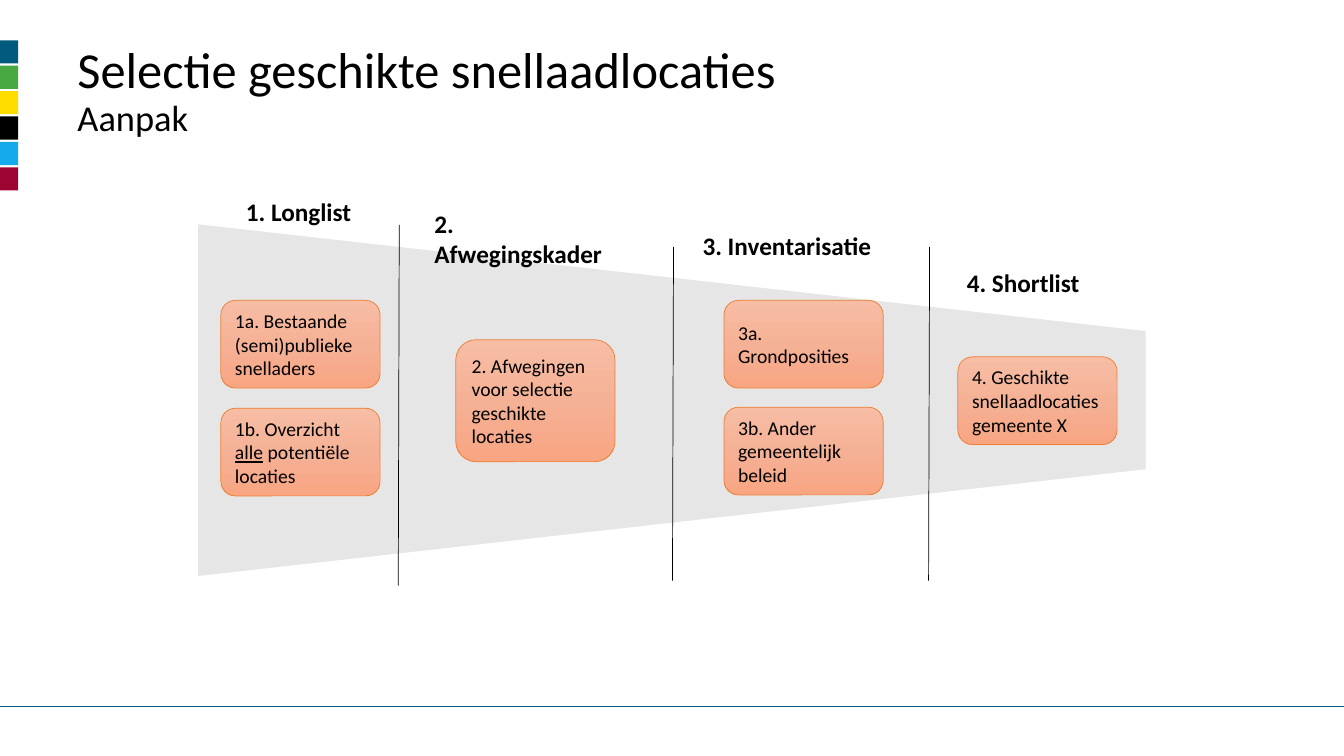
from copy import deepcopy
from pptx import Presentation
from pptx.dml.color import RGBColor as Rgb
from pptx.enum.shapes import MSO_CONNECTOR as Line, MSO_SHAPE as Shape
from pptx.enum.text import MSO_ANCHOR as Anchor, MSO_AUTO_SIZE as Auto, PP_ALIGN as Align
from pptx.oxml.ns import qn
from pptx.oxml.xmlchemy import OxmlElement
from pptx.util import Inches, Pt

BLACK = Rgb(0, 0, 0)
BLUE = Rgb(0x00, 0x5B, 0x7F)
GREY = Rgb(0xE7, 0xE6, 0xE6)
EDGE = Rgb(0xED, 0x7D, 0x31)
GLOW = [Rgb(0xF7, 0xBD, 0xA5), Rgb(0xF5, 0xB1, 0x96), Rgb(0xF8, 0xA5, 0x82)]
STRIPES = [BLUE, Rgb(0x48, 0xA8, 0x42), Rgb(0xFF, 0xDD, 0x00), BLACK,
           Rgb(0x15, 0xAB, 0xEA), Rgb(0x9E, 0x04, 0x31)]
FONT = "Calibri"
CARD_W, CARD_H = 1.58, 0.87

STAGES = [
    ("1. Longlist", 0.37, -0.33, 0.22, [
        (0.75, CARD_H, ["1a. Bestaande (semi)publieke", "snelladers"]),
        (1.82, CARD_H, ["1b. Overzicht _alle_ potentiële locaties"])]),
    ("2. Afwegingskader", 2.24, -0.21, 2.55, [
        (1.14, 1.21, ["2. Afwegingen voor selectie geschikte locaties"])]),
    ("3. Inventarisatie", 4.9, 0.01, 5.21, [
        (0.75, CARD_H, ["3a. Grondposities"]),
        (1.81, CARD_H, ["3b. Ander gemeentelijk beleid"])]),
    ("4. Shortlist", 7.52, 0.37, 7.53, [
        (1.31, CARD_H, ["4. Geschikte snellaadlocaties gemeente X"])]),
]
SPLITS = [(1.99, 0, 3.58), (4.71, 0.22, 3.53), (7.25, 0.22, 3.53)]


def style(para, size, bold=False):
    """Format every run of a paragraph."""
    for run in para.runs:
        font = run.font
        font.name, font.size, font.bold = FONT, Pt(size), bold
        font.color.rgb = BLACK


def add_form(slide, kind, x, y, w, h):
    """Add a preset shape without shadow."""
    form = slide.shapes.add_shape(kind, Inches(x), Inches(y), Inches(w), Inches(h))
    form.shadow.inherit = False
    return form


def add_rule(slide, x1, y1, x2, y2, tint):
    """Add a thin straight line."""
    rule = slide.shapes.add_connector(
        Line.STRAIGHT, Inches(x1), Inches(y1), Inches(x2), Inches(y2))
    rule.line.color.rgb = tint
    rule.line.width = Pt(0.5)
    rule._element.spPr.append(OxmlElement("a:effectLst"))


def add_frame(slide, x, y, w, h):
    """Add a text box and return its text frame."""
    return slide.shapes.add_textbox(
        Inches(x), Inches(y), Inches(w), Inches(h)).text_frame


def add_brand(slide, x, y, w, h):
    """Stack the colour stripes down the edge of the box."""
    step = 0.252
    for i, tint in enumerate(STRIPES):
        bar = add_form(slide, Shape.RECTANGLE, x, y + i * step, w, h - 5 * step)
        bar.fill.solid()
        bar.fill.fore_color.rgb = tint
        bar.line.fill.background()


def add_title(slide, x, y, w, h):
    """Write the title and its second line in the box."""
    frame = add_frame(slide, x, y, w, h)
    frame.word_wrap = True
    frame.text = "Selectie geschikte snellaadlocaties\nAanpak"
    for para, size in zip(frame.paragraphs, (36, 26)):
        para.line_spacing = 0.9
        style(para, size)


def add_card(slide, x, y, w, h, lines):
    """Draw a shaded card; words between underscores are underlined."""
    card = add_form(slide, Shape.ROUNDED_RECTANGLE, x, y, w, h)
    card.fill.gradient()
    card.fill.gradient_angle = 270
    first = card._element.spPr.find(qn("a:gradFill")).find(qn("a:gsLst"))[0]
    first.addnext(deepcopy(first))
    for stop, tint, spot in zip(card.fill.gradient_stops, GLOW, (0, 0.5, 1)):
        stop.color.rgb = tint
        stop.position = spot
    card.line.color.rgb = EDGE
    card.line.width = Pt(0.5)
    frame = card.text_frame
    frame.word_wrap = True
    frame.vertical_anchor = Anchor.MIDDLE
    frame.text = "\n".join(lines)
    for para, line in zip(frame.paragraphs, lines):
        para.alignment = Align.LEFT
        para.text = ""
        for i, part in enumerate(line.split("_")):
            run = para.add_run()
            run.text = part
            run.font.underline = i % 2 == 1
        style(para, 14)


def add_head(slide, x, y, text):
    """Write a stage heading."""
    frame = add_frame(slide, x, y, 0.2 + 0.11 * len(text), 0.4)
    frame.word_wrap = False
    frame.auto_size = Auto.SHAPE_TO_FIT_TEXT
    frame.text = text
    style(frame.paragraphs[0], 18, True)


def add_funnel(slide, x, y, w, h):
    """Draw the funnel with its dividers, headings and cards."""
    cone = add_form(slide, Shape.TRAPEZOID, x + (w - h) / 2, y + (h - w) / 2, h, w)
    cone.rotation = 90
    cone.adjustments[0] = 0.304
    cone.fill.solid()
    cone.fill.fore_color.rgb = GREY
    cone.line.color.rgb = GREY
    cone.line.width = Pt(0.5)
    for left, top, end in SPLITS:
        add_rule(slide, x + left, y + top, x + left - 0.01, y + end, BLACK)
    for head, left, top, inset, cards in STAGES:
        add_head(slide, x + left, y + top, head)
        for drop, tall, lines in cards:
            add_card(slide, x + inset, y + drop, CARD_W, tall, lines)


def main():
    """Build and save the slide."""
    deck = Presentation()
    deck.slide_width, deck.slide_height = Inches(13.33), Inches(7.5)
    slide = deck.slides.add_slide(deck.slide_layouts[6])
    add_brand(slide, 0, 0.4, 0.18, 1.49)
    add_rule(slide, 0, 7.01, 13.33, 7.01, BLUE)
    add_title(slide, 0.67, 0.4, 10.31, 1.45)
    add_funnel(slide, 1.97, 2.23, 9.39, 3.48)
    deck.save("out.pptx")


if __name__ == "__main__":
    main()
